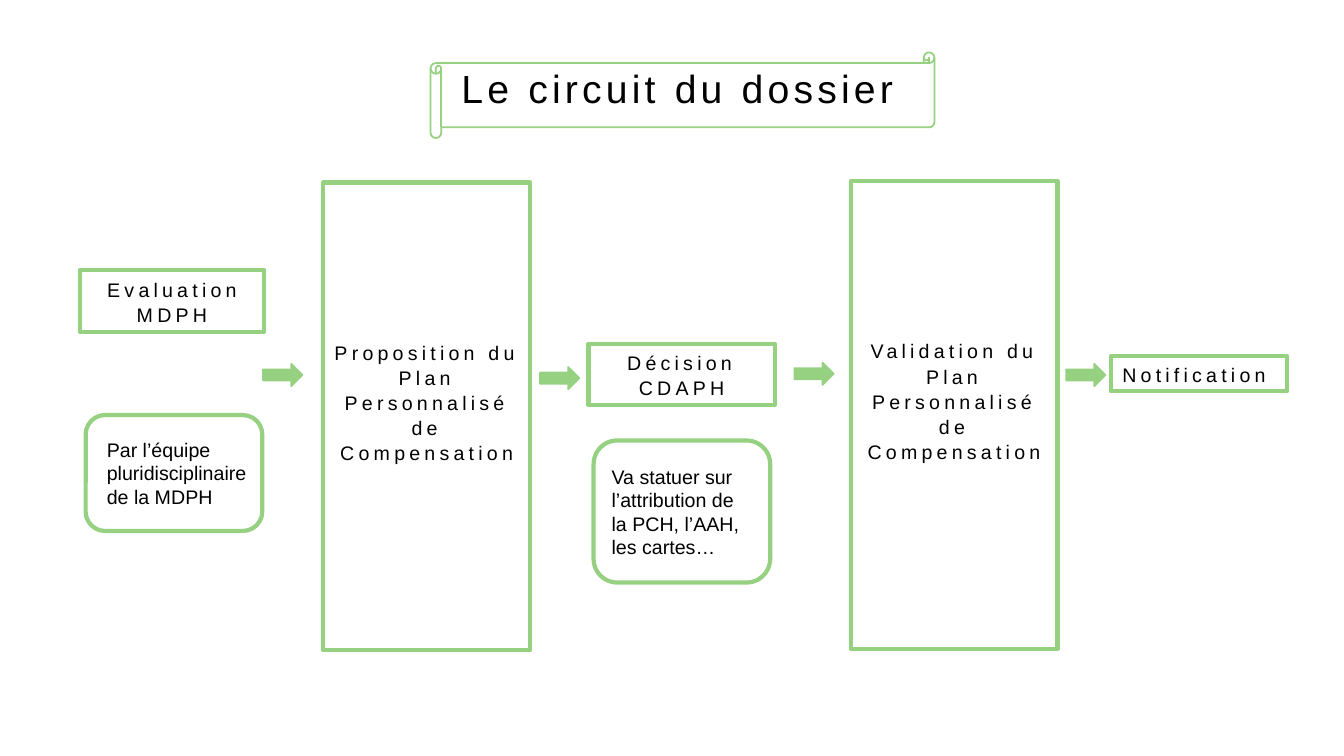
from dataclasses import dataclass

from pptx import Presentation
from pptx.dml.color import RGBColor
from pptx.enum.shapes import MSO_SHAPE
from pptx.enum.text import MSO_ANCHOR, PP_ALIGN
from pptx.util import Cm, Pt


@dataclass(frozen=True)
class Theme:
    green: RGBColor = RGBColor(0x96, 0xD1, 0x81)
    black: RGBColor = RGBColor(0, 0, 0)
    font: str = "Arial"
    title_size: float = 28
    body_size: float = 14
    letter_spacing: float = 3
    thick: float = 3
    thin: float = 1.25


THEME = Theme()


def add_outline(page, kind, box, line_width):
    shape = page.shapes.add_shape(kind, *(Cm(length) for length in box))
    shape.shadow.inherit = False
    shape.fill.background()
    shape.line.color.rgb = THEME.green
    shape.line.width = Pt(line_width)
    return shape


def write(shape, text, size, align, margins, line_spacing=1.0, spaced=False):
    """Fill a shape with text; margins are left, top, right, bottom in cm."""
    frame = shape.text_frame
    frame.word_wrap = True
    frame.vertical_anchor = MSO_ANCHOR.MIDDLE
    (frame.margin_left, frame.margin_top,
     frame.margin_right, frame.margin_bottom) = (Cm(m) for m in margins)
    frame.text = text
    for para in frame.paragraphs:
        para.alignment = align
        para.line_spacing = line_spacing
        para.font.name = THEME.font
        para.font.size = Pt(size)
        para.font.color.rgb = THEME.black
        if spaced:
            for span in para.runs:
                span.font._element.set("spc", str(int(THEME.letter_spacing * 100)))


def add_title(page, box, text):
    scroll = add_outline(page, MSO_SHAPE.HORIZONTAL_SCROLL, box, THEME.thin)
    write(scroll, text, THEME.title_size, PP_ALIGN.LEFT, (0.51, 0, 0, 0.36), spaced=True)


def add_step(page, box, text, bottom_margin=0.13):
    step = add_outline(page, MSO_SHAPE.RECTANGLE, box, THEME.thick)
    write(step, text, THEME.body_size, PP_ALIGN.CENTER,
          (0.25, 0.13, 0.25, bottom_margin), 1.07, spaced=True)


def add_note(page, box, text, left_margin, right_margin):
    note = add_outline(page, MSO_SHAPE.ROUNDED_RECTANGLE, box, THEME.thick)
    write(note, text, THEME.body_size, PP_ALIGN.LEFT,
          (left_margin, 0.13, right_margin, 0.13))


def add_arrow(page, left, top):
    arrow = add_outline(page, MSO_SHAPE.RIGHT_ARROW, (left, top, 0.99, 0.56), THEME.thin)
    arrow.fill.solid()
    arrow.fill.fore_color.rgb = THEME.green


def add_circuit(page):
    plan = "Plan Personnalisé de Compensation"
    add_step(page, (2.01, 6.81, 4.65, 1.55), "Evaluation\nMDPH")
    add_step(page, (8.15, 4.6, 5.21, 11.79), f"Proposition du {plan}", bottom_margin=0.87)
    add_step(page, (14.83, 8.66, 4.7, 1.55), "Décision CDAPH")
    add_step(page, (21.44, 4.57, 5.21, 11.79), f"Validation du {plan}", bottom_margin=0.87)
    add_step(page, (27.99, 8.97, 4.45, 0.89), "Notification ")
    add_note(page, (2.16, 10.46, 4.45, 2.92),
             "Par l’équipe pluridisciplinaire de la MDPH", 0.39, 0.13)
    add_note(page, (14.96, 11.1, 4.45, 3.58),
             "Va statuer sur l’attribution de la PCH, l’AAH, les cartes…", 0.28, 0.38)
    for left, top in ((6.63, 9.17), (13.61, 9.25), (20.02, 9.14), (26.87, 9.17)):
        add_arrow(page, left, top)


def main():
    deck = Presentation()
    deck.slide_width, deck.slide_height = Cm(33.87), Cm(19.05)
    page = deck.slides.add_slide(deck.slide_layouts[6])
    add_title(page, (10.85, 1.32, 12.7, 2.16), "Le circuit du dossier")
    add_circuit(page)
    deck.save("out.pptx")


if __name__ == "__main__":
    main()
